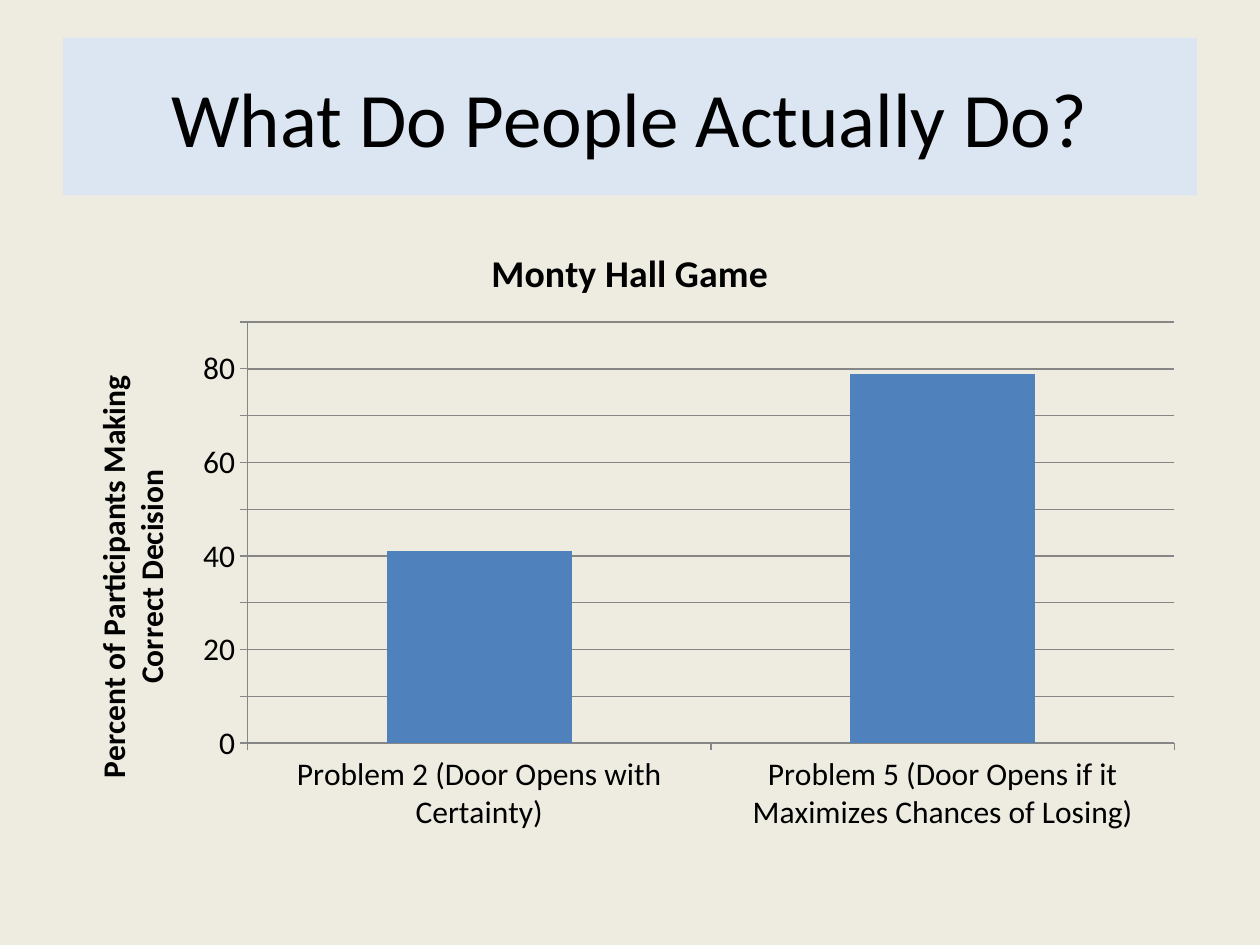
from pptx import Presentation
from pptx.chart.data import CategoryChartData
from pptx.dml.color import RGBColor
from pptx.enum.chart import XL_CHART_TYPE as CT, XL_TICK_MARK as TICK
from pptx.enum.shapes import MSO_SHAPE as SHAPE
from pptx.enum.text import MSO_ANCHOR as ANCHOR, PP_ALIGN as ALIGN
from pptx.util import Inches, Pt

# Content
TITLE = "What Do People Actually Do?"
CHART_TITLE = "Monty Hall Game"
AXIS_TITLE = "Percent of Participants Making Correct Decision"
RESULTS = {
    "Problem 2 (Door Opens with Certainty)": 41,
    "Problem 5 (Door Opens if it Maximizes Chances of Losing)": 79,
}

# Format
CREAM = RGBColor(0xEE, 0xEC, 0xE1)
PALE_BLUE = RGBColor(0xDC, 0xE6, 0xF2)
BLUE = RGBColor(0x4F, 0x81, 0xBD)
GRAY = RGBColor(0x86, 0x86, 0x86)
BLACK = RGBColor(0, 0, 0)
FONT = "Calibri"
LEFT, WIDTH = Inches(0.5), Inches(9)


def set_font(font, size, bold=False):
    font.color.rgb = BLACK
    for name, value in {"name": FONT, "size": Pt(size), "bold": bold}.items():
        setattr(font, name, value)


def set_title(owner, text, size):
    tf = owner.text_frame
    tf.text = text
    set_font(tf.paragraphs[0].runs[0].font, size, True)


prs = Presentation()
prs.slide_width, prs.slide_height = Inches(10), Inches(7.5)
s = prs.slides.add_slide(prs.slide_layouts[6])
s.background.fill.solid()
s.background.fill.fore_color.rgb = CREAM

# Title band
sp = s.shapes.add_shape(SHAPE.RECTANGLE, LEFT, Inches(0.3), WIDTH, Inches(1.25))
sp.shadow.inherit = False
sp.fill.solid()
sp.fill.fore_color.rgb = PALE_BLUE
sp.line.fill.background()
tf = sp.text_frame
tf.word_wrap = True
tf.vertical_anchor = ANCHOR.MIDDLE
p = tf.paragraphs[0]
p.alignment = ALIGN.CENTER
r = p.add_run()
r.text = TITLE
set_font(r.font, 44)

# Column chart
data = CategoryChartData()
data.categories = list(RESULTS)
data.add_series(CHART_TITLE, list(RESULTS.values()))
chart = s.shapes.add_chart(CT.COLUMN_CLUSTERED, LEFT, Inches(1.75),
                           WIDTH, Inches(4.95), data).chart
set_font(chart.font, 18)
chart.has_legend = False
set_title(chart.chart_title, CHART_TITLE, 21.6)
chart.chart_title.include_in_layout = False

plot = chart.plots[0]
plot.gap_width = 150
plot.vary_by_categories = False
fill = plot.series[0].format.fill
fill.solid()
fill.fore_color.rgb = BLUE

# Axes
val_axis = chart.value_axis
val_axis.minimum_scale = 0
val_axis.has_major_gridlines = True
set_title(val_axis.axis_title, AXIS_TITLE, 18)
for axis in (chart.category_axis, val_axis):
    axis.major_tick_mark = TICK.OUTSIDE
    axis.minor_tick_mark = TICK.NONE
for part in (chart.category_axis, val_axis, val_axis.major_gridlines):
    part.format.line.color.rgb = GRAY
    part.format.line.width = Pt(0.75)

prs.save("out.pptx")
